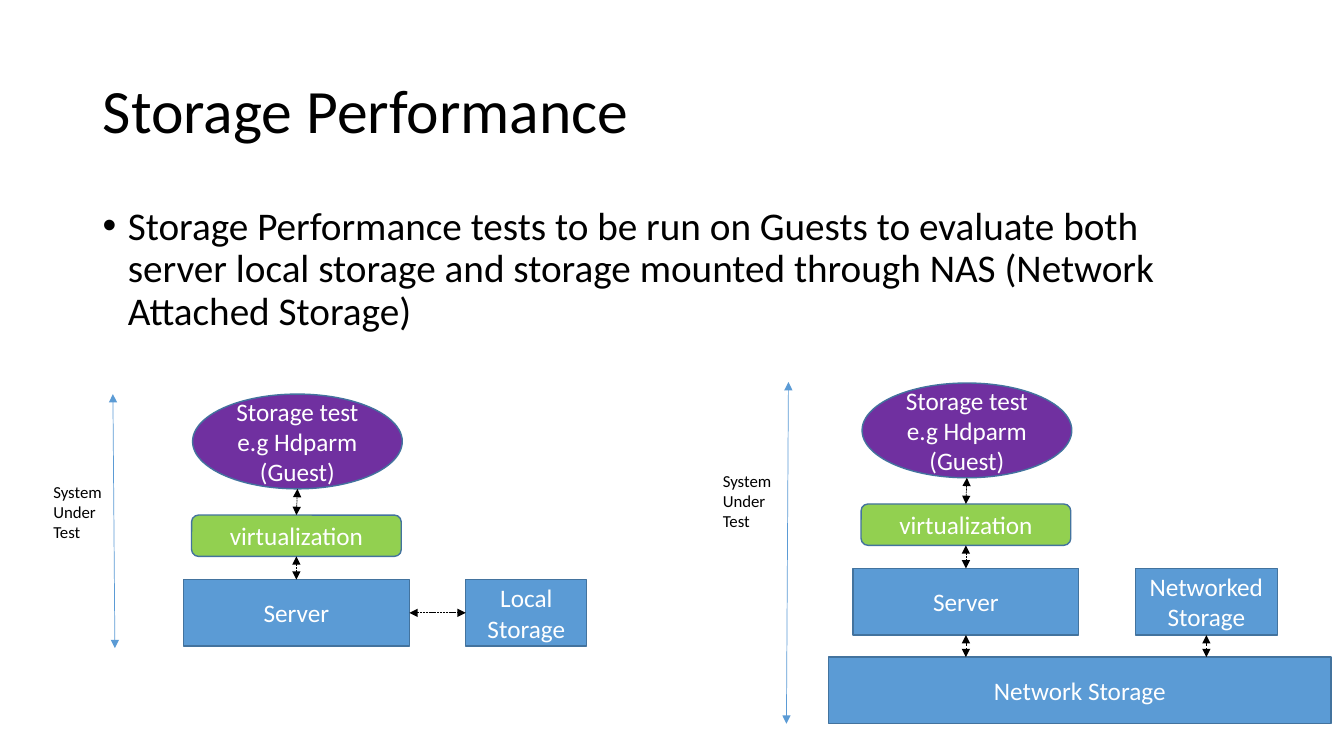
from dataclasses import dataclass

from lxml import etree
from pptx import Presentation
from pptx.dml.color import RGBColor
from pptx.enum.dml import MSO_LINE
from pptx.enum.shapes import MSO_CONNECTOR, MSO_SHAPE
from pptx.enum.text import MSO_ANCHOR, MSO_AUTO_SIZE, PP_ALIGN
from pptx.oxml.ns import qn
from pptx.util import Inches, Pt

RECT, ROUNDED, OVAL = MSO_SHAPE.RECTANGLE, MSO_SHAPE.ROUNDED_RECTANGLE, MSO_SHAPE.OVAL
STRAIGHT = MSO_CONNECTOR.STRAIGHT
DASH, SYS_DASH = MSO_LINE.DASH, MSO_LINE.SQUARE_DOT
LEFT, CENTER = PP_ALIGN.LEFT, PP_ALIGN.CENTER
TOP, MIDDLE = MSO_ANCHOR.TOP, MSO_ANCHOR.MIDDLE
NO_FIT = MSO_AUTO_SIZE.NONE
TOP_SIDE, LEFT_SIDE, BOTTOM_SIDE, RIGHT_SIDE = range(4)


@dataclass(frozen=True)
class Theme:
    font: str = "Calibri"
    ink: str = "000000"
    label: str = "FFFFFF"
    blue: str = "5B9BD5"
    green: str = "92D050"
    purple: str = "7030A0"
    outline: str = "43739E"
    title_size: int = 44
    body_size: int = 28
    label_size: int = 18
    note_size: int = 12


THEME = Theme()

TITLE = "Storage Performance"
SUMMARY = (
    "Storage Performance tests to be run on Guests to evaluate both server local storage "
    "and storage mounted through NAS (Network Attached Storage)"
)
SCOPE = "System Under Test"
STACK = {
    "guest": ("Storage test e.g Hdparm\v(Guest)", OVAL, THEME.purple, (1.91, 3.91, 2.08, 0.94)),
    "virtualization": ("virtualization", ROUNDED, THEME.green, (1.9, 5.11, 2.08, 0.41)),
    "server": ("Server", RECT, THEME.blue, (1.82, 5.75, 2.24, 0.66)),
}
SCOPE_BOX = (0.43, 4.73, 0.75, 0.71)
LOCAL_STORAGE = ("Local Storage", RECT, THEME.blue, (4.62, 5.75, 1.2, 0.66))
NETWORKED_STORAGE = ("Networked Storage", RECT, THEME.blue, (11.26, 5.64, 1.41, 0.66))
NETWORK = ("Network Storage", RECT, THEME.blue, (8.22, 6.52, 4.98, 0.66))
LOCAL_SHIFT = (0, 0)
NETWORK_SHIFT = (6.64, -0.11)
LOCAL_SCOPE = ((1.12, 3.91), (1.14, 6.43))
NETWORK_SCOPE = ((7.82, 3.79), (7.8, 7.18))


def write(frame, text, size, color=THEME.ink, align=LEFT, anchor=TOP, spacing=None):
    frame.word_wrap = True
    frame.auto_size = NO_FIT
    frame.vertical_anchor = anchor
    paragraph = frame.paragraphs[0]
    paragraph.text = text
    paragraph.alignment = align
    if spacing:
        paragraph.line_spacing = spacing
    for run in paragraph.runs:
        run.font.name = THEME.font
        run.font.size = Pt(size)
        run.font.color.rgb = RGBColor.from_string(color)
    return paragraph


def add_bullet(paragraph):
    properties = paragraph._p.get_or_add_pPr()
    properties.set("marL", str(Inches(0.25)))
    properties.set("indent", str(Inches(-0.25)))
    etree.SubElement(properties, qn("a:buFont")).set("typeface", "Arial")
    etree.SubElement(properties, qn("a:buChar")).set("char", "•")


def shifted(box, shift):
    left, top, width, height = box
    return left + shift[0], top + shift[1], width, height


def add_text(slide, text, box, size, **style):
    frame = slide.shapes.add_textbox(*map(Inches, box)).text_frame
    return write(frame, text, size, **style)


def add_node(slide, node, shift=(0, 0)):
    text, kind, fill, box = node
    shape = slide.shapes.add_shape(kind, *map(Inches, shifted(box, shift)))
    shape.shadow.inherit = False
    shape.fill.solid()
    shape.fill.fore_color.rgb = RGBColor.from_string(fill)
    shape.line.color.rgb = RGBColor.from_string(THEME.outline)
    shape.line.width = Pt(1)
    write(shape.text_frame, text, THEME.label_size, color=THEME.label, align=CENTER, anchor=MIDDLE)
    return shape


def add_arrow(slide, start, end, color=THEME.ink, dash=None):
    arrow = slide.shapes.add_connector(STRAIGHT, *start, *end)
    arrow.line.color.rgb = RGBColor.from_string(color)
    arrow.line.width = Pt(0.5)
    if dash:
        arrow.line.dash_style = dash
    line = arrow.line._get_or_add_ln()
    for tag in ("a:headEnd", "a:tailEnd"):
        etree.SubElement(line, qn(tag)).set("type", "triangle")
    etree.SubElement(arrow._element.spPr, qn("a:effectLst"))
    return arrow


def side(shape, index):
    center = shape.left + shape.width // 2
    middle = shape.top + shape.height // 2
    return (
        (center, shape.top),
        (shape.left, middle),
        (center, shape.top + shape.height),
        (shape.left + shape.width, middle),
    )[index]


def join(slide, upper, upper_side, lower, lower_side, dash=SYS_DASH):
    arrow = add_arrow(slide, side(upper, upper_side), side(lower, lower_side), dash=dash)
    if upper.auto_shape_type != OVAL:
        arrow.begin_connect(upper, upper_side)
    arrow.end_connect(lower, lower_side)


def drop(slide, upper, lower):
    start = side(upper, BOTTOM_SIDE)
    arrow = add_arrow(slide, start, (start[0], lower.top), dash=DASH)
    arrow.begin_connect(upper, BOTTOM_SIDE)


def add_stack(slide, shift, scope):
    nodes = {name: add_node(slide, node, shift) for name, node in STACK.items()}
    join(slide, nodes["guest"], BOTTOM_SIDE, nodes["virtualization"], TOP_SIDE)
    join(slide, nodes["virtualization"], BOTTOM_SIDE, nodes["server"], TOP_SIDE)
    start, end = (tuple(map(Inches, point)) for point in scope)
    add_arrow(slide, start, end, color=THEME.blue)
    add_text(slide, SCOPE, shifted(SCOPE_BOX, shift), THEME.note_size)
    return nodes["server"]


def main():
    deck = Presentation()
    deck.slide_width, deck.slide_height = Inches(13.33), Inches(7.5)
    slide = deck.slides.add_slide(deck.slide_layouts[5])

    title = slide.shapes.title
    title.left, title.top, title.width, title.height = map(Inches, (0.92, 0.4, 11.5, 1.45))
    write(title.text_frame, TITLE, THEME.title_size, anchor=MIDDLE, spacing=0.9)
    summary = add_text(slide, SUMMARY, (0.92, 2, 11.5, 4.76), THEME.body_size, spacing=0.9)
    summary.space_before = Pt(10)
    add_bullet(summary)

    local_server = add_stack(slide, LOCAL_SHIFT, LOCAL_SCOPE)
    local_storage = add_node(slide, LOCAL_STORAGE)
    join(slide, local_server, RIGHT_SIDE, local_storage, LEFT_SIDE)

    network_server = add_stack(slide, NETWORK_SHIFT, NETWORK_SCOPE)
    networked_storage = add_node(slide, NETWORKED_STORAGE)
    network = add_node(slide, NETWORK)
    for source in (network_server, networked_storage):
        drop(slide, source, network)

    deck.save("out.pptx")


if __name__ == "__main__":
    main()
